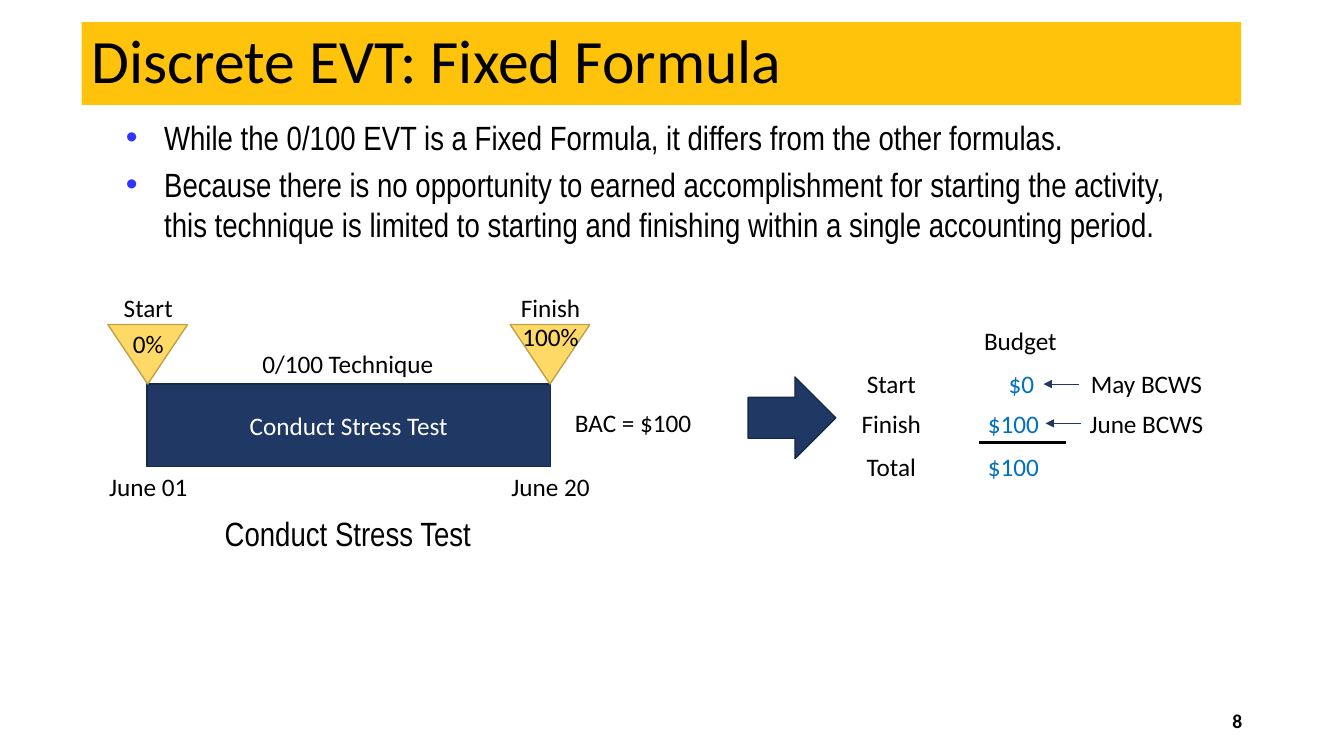
from lxml.etree import SubElement
from pptx import Presentation
from pptx.dml.color import RGBColor
from pptx.enum.shapes import MSO_CONNECTOR, MSO_SHAPE
from pptx.enum.text import MSO_ANCHOR, PP_ALIGN
from pptx.oxml.ns import qn
from pptx.util import Inches, Pt

BLACK, WHITE, BLUE, NAVY, NAVY_EDGE = "000000", "FFFFFF", "0070C0", "1F3864", "17294A"
GOLD, YELLOW, YELLOW_EDGE, BULLET = "FFC30C", "FFD965", "BDA14B", "3333FF"
LEFT, CENTER, RIGHT = PP_ALIGN.LEFT, PP_ALIGN.CENTER, PP_ALIGN.RIGHT

TITLE = "Discrete EVT: Fixed Formula"
BULLETS = [
    "While the 0/100 EVT is a Fixed Formula, it differs from the other formulas.",
    "Because there is no opportunity to earned accomplishment for starting the activity, "
    "this technique is limited to starting and finishing within a single accounting period.",
]
ACTIVITY = "Conduct Stress Test"
MILESTONES = [
    (1.47, "Start", "0%", 3.21, "June 01"),
    (5.46, "Finish", "100%", 3.14, "June 20"),
]
NOTES = [
    (3.45, 3.41, 2.03, "0/100 Technique"),
    (6.28, 3.99, 1.37, "BAC = $100"),
    (10.12, 3.18, 0.99, "Budget"),
]
BUDGET = [
    (3.61, "Start", 10.13, "$0", "May BCWS", 10.7),
    (4.0, "Finish", 10.05, "$100", "June BCWS", 10.72),
    (4.43, "Total", 10.05, "$100", None, None),
]

prs = Presentation()
prs.slide_width, prs.slide_height = Inches(13.33), Inches(7.5)
s = prs.slides.add_slide(prs.slide_layouts[6])


def rgb(value):
    """Turn a hex string into a colour."""
    return RGBColor.from_string(value)


def write(shape, lines, size=18, color=BLACK, align=CENTER, anchor=MSO_ANCHOR.TOP,
          font="Calibri", bold=False, **spacing):
    """Fill a shape with paragraphs in one format."""
    tf = shape.text_frame
    tf.word_wrap, tf.vertical_anchor = True, anchor
    tf.text = "\n".join(lines)
    for p in tf.paragraphs:
        for name, value in {"alignment": align, **spacing}.items():
            setattr(p, name, value)
        for r in p.runs:
            for name, value in {"name": font, "size": Pt(size), "bold": bold}.items():
                setattr(r.font, name, value)
            r.font.color.rgb = rgb(color)
    return tf


def label(center, top, width, text, height=0.4, **style):
    """Add a text box centred on a horizontal position."""
    box = s.shapes.add_textbox(*map(Inches, (center - width / 2, top, width, height)))
    return write(box, [text] if isinstance(text, str) else text, **style)


def block(kind, at, fill, edge=None):
    """Add a filled preset shape."""
    sp = s.shapes.add_shape(kind, *map(Inches, at))
    sp.shadow.inherit = False
    sp.fill.solid()
    sp.fill.fore_color.rgb = rgb(fill)
    if edge:
        sp.line.color.rgb, sp.line.width = rgb(edge), Pt(1)
    else:
        sp.line.fill.background()
    return sp


def rule(x1, x2, y, color, width, arrow=False):
    """Draw a horizontal line, with an arrowhead at its end if asked."""
    line = s.shapes.add_connector(MSO_CONNECTOR.STRAIGHT, *map(Inches, (x1, y, x2, y)))
    line.line.color.rgb, line.line.width = rgb(color), Pt(width)
    if arrow:
        SubElement(line.line._get_or_add_ln(), qn("a:tailEnd"), type="triangle")
    SubElement(line._element.spPr, qn("a:effectLst"))


def bullet(p):
    """Give a paragraph a hanging coloured bullet."""
    pPr = p._p.get_or_add_pPr()
    pPr.set("marL", str(Inches(0.38)))
    pPr.set("indent", str(-Inches(0.38)))
    SubElement(SubElement(pPr, qn("a:buClr")), qn("a:srgbClr"), val=BULLET)
    SubElement(pPr, qn("a:buFont"), typeface="Arial")
    SubElement(pPr, qn("a:buChar"), char="•")


def main():
    """Build the slide and save it."""
    title = block(MSO_SHAPE.RECTANGLE, (0.81, 0.22, 11.5, 0.82), GOLD)
    write(title, [TITLE], size=44, align=LEFT, anchor=MSO_ANCHOR.MIDDLE, line_spacing=0.9)

    tf = label(6.59, 1.11, 10.88, BULLETS, height=1.39, size=24, align=LEFT,
               font="Arial Narrow", space_before=Pt(4.8))
    for p in tf.paragraphs:
        bullet(p)

    bar = block(MSO_SHAPE.RECTANGLE, (1.46, 3.81, 4, 0.82), NAVY, NAVY_EDGE)
    write(bar, [ACTIVITY], color=WHITE, anchor=MSO_ANCHOR.MIDDLE)
    label(3.45, 5.04, 2.87, ACTIVITY, height=0.5, size=24, font="Arial Narrow",
          space_before=Pt(4.8))

    for x, name, percent, percent_top, date in MILESTONES:
        marker = block(MSO_SHAPE.ISOSCELES_TRIANGLE, (x - 0.4, 3.22, 0.79, 0.59),
                       YELLOW, YELLOW_EDGE)
        marker.rotation = 180
        label(x, 2.85, 0.99, name)
        label(x, percent_top, 0.78, percent)
        label(x, 4.63, 0.99, date)

    for note in NOTES:
        label(*note)

    block(MSO_SHAPE.RIGHT_ARROW, (7.42, 3.74, 0.87, 0.81), NAVY, NAVY_EDGE)
    for top, name, x, amount, source, arrow_x in BUDGET:
        label(8.84, top, 0.99, name)
        label(x, top, 0.99, amount, color=BLUE)
        if source:
            label(11.37, top, 1.49, source)
            rule(arrow_x, arrow_x - 0.35, top + 0.2, NAVY, 0.5, arrow=True)
    rule(9.71, 10.57, 4.39, BLACK, 2.25)

    label(10.92, 6.95, 3, "8", size=14, align=RIGHT, anchor=MSO_ANCHOR.MIDDLE, bold=True)
    prs.save("out.pptx")


if __name__ == "__main__":
    main()
